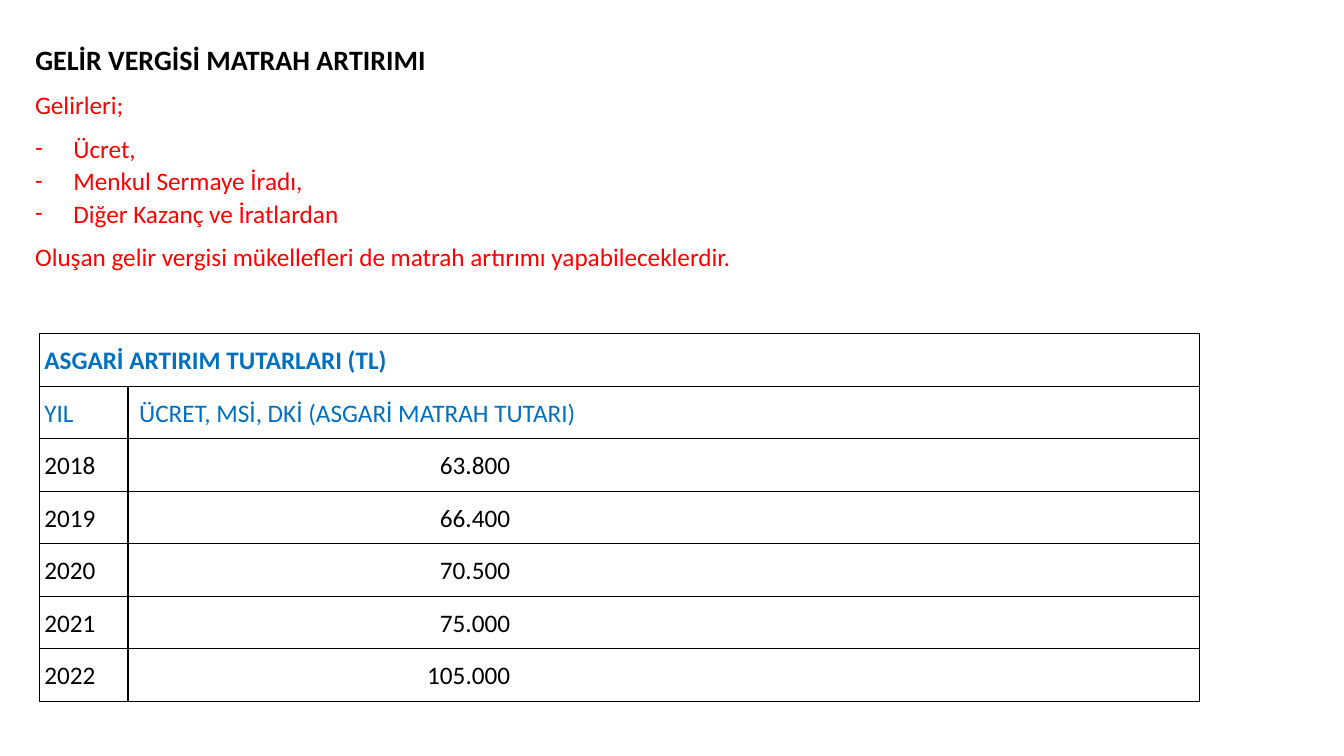
import pptx
import pptx.dml.color
import pptx.enum.text
import pptx.oxml
import pptx.oxml.ns
import pptx.util

Inches = pptx.util.Inches
Pt = pptx.util.Pt
RGBColor = pptx.dml.color.RGBColor
ALIGN = pptx.enum.text.PP_ALIGN
ANCHOR = pptx.enum.text.MSO_ANCHOR

BLACK = RGBColor(0, 0, 0)
RED = RGBColor(0xFF, 0, 0)
BLUE = RGBColor(0, 0x70, 0xC0)
FONT = "Calibri"

HEADING = "GELİR VERGİSİ MATRAH ARTIRIMI"
INCOME_KINDS = ["Ücret,", "Menkul Sermaye İradı,", "Diğer Kazanç ve İratlardan"]
CONCLUSION = "Oluşan gelir vergisi mükellefleri de matrah artırımı yapabileceklerdir."
TABLE_HEADING = "ASGARİ ARTIRIM TUTARLARI (TL)"
COLUMN_HEADINGS = ["YIL", "ÜCRET, MSİ, DKİ (ASGARİ MATRAH TUTARI)"]
MINIMUM_AMOUNTS = [
    ("2018", "63.800"),
    ("2019", "66.400"),
    ("2020", "70.500"),
    ("2021", "75.000"),
    ("2022", "105.000"),
]


def xml_element(tag, body="", **attributes):
    listed = " ".join(f'{name}="{value}"' for name, value in attributes.items())
    namespace = pptx.oxml.ns.nsdecls("a")
    return pptx.oxml.parse_xml(f"<a:{tag} {namespace} {listed}>{body}</a:{tag}>")


def write(paragraph, text, *, color=BLACK, size=18, bold=False,
          align=ALIGN.JUSTIFY, after=8, dash=False):
    paragraph.alignment = align
    paragraph.line_spacing = 1.07
    paragraph.space_before = Pt(0)
    paragraph.space_after = Pt(after)
    run = paragraph.add_run()
    run.text = text
    run.font.name = FONT
    run.font.size = Pt(size)
    run.font.bold = bold
    run.font.color.rgb = color
    if dash:
        properties = paragraph._p.get_or_add_pPr()
        properties.set("marL", str(Inches(0.38)))
        properties.set("indent", str(-Inches(0.38)))
        properties.append(xml_element("buFont", typeface=FONT))
        properties.append(xml_element("buChar", char="-"))


def add_heading(slide, left, top, width, height):
    title = slide.shapes.title
    title.left, title.top = Inches(left), Inches(top)
    title.width, title.height = Inches(width), Inches(height)
    frame = title.text_frame
    frame.word_wrap = True
    frame.auto_size = pptx.enum.text.MSO_AUTO_SIZE.NONE
    frame.vertical_anchor = ANCHOR.TOP
    write(frame.paragraphs[0], HEADING, size=20, bold=True)


def add_taxpayer_text(slide, left, top, width, height):
    box = slide.shapes.add_textbox(Inches(left), Inches(top), Inches(width), Inches(height))
    frame = box.text_frame
    frame.word_wrap = True
    write(frame.paragraphs[0], "Gelirleri;", color=RED)
    for kind in INCOME_KINDS:
        is_last = kind == INCOME_KINDS[-1]
        write(frame.add_paragraph(), kind, color=RED, dash=True, after=8 if is_last else 0)
    write(frame.add_paragraph(), CONCLUSION, color=RED)


def format_cell(cell):
    cell.vertical_anchor = ANCHOR.MIDDLE
    cell.margin_left = cell.margin_right = Inches(0.05)
    cell.margin_top = cell.margin_bottom = 0
    line_fill = f'<a:solidFill><a:srgbClr val="{BLACK}"/></a:solidFill>'
    properties = cell._tc.get_or_add_tcPr()
    for side in ("lnL", "lnR", "lnT", "lnB"):
        properties.append(xml_element(side, line_fill, w=Pt(1)))
    cell.fill.background()


def add_amounts_table(slide, left, top, width, height):
    row_count = len(MINIMUM_AMOUNTS) + 2
    year_width = 0.88
    amount_edge = 3.79  # right edge of the amounts within their column
    table = slide.shapes.add_table(
        row_count, 2, Inches(left), Inches(top), Inches(width), Inches(height)).table
    table.first_row = table.horz_banding = False
    table.columns[0].width = Inches(year_width)
    table.columns[1].width = Inches(width - year_width)
    for row in table.rows:
        row.height = Inches(height / row_count)
    for cell in table.iter_cells():
        format_cell(cell)

    heading = table.cell(0, 0)
    heading.merge(table.cell(0, 1))
    write(heading.text_frame.paragraphs[0], TABLE_HEADING, color=BLUE, bold=True)
    for column, text in enumerate(COLUMN_HEADINGS):
        write(table.cell(1, column).text_frame.paragraphs[0], text, color=BLUE)
    table.cell(1, 1).margin_left = Inches(0.11)
    for row, (year, amount) in enumerate(MINIMUM_AMOUNTS, start=2):
        write(table.cell(row, 0).text_frame.paragraphs[0], year)
        amount_cell = table.cell(row, 1)
        amount_cell.margin_right = Inches(width - year_width - amount_edge)
        write(amount_cell.text_frame.paragraphs[0], amount, align=ALIGN.RIGHT)


def main():
    presentation = pptx.Presentation()
    presentation.slide_width = Inches(13.33)
    presentation.slide_height = Inches(7.5)
    slide = presentation.slides.add_slide(presentation.slide_layouts[5])
    add_heading(slide, 0.25, 0.35, 12.86, 0.47)
    add_taxpayer_text(slide, 0.25, 0.82, 12.86, 2.1)
    add_amounts_table(slide, 0.39, 3.31, 11.51, 3.65)
    presentation.save("out.pptx")


if __name__ == "__main__":
    main()
